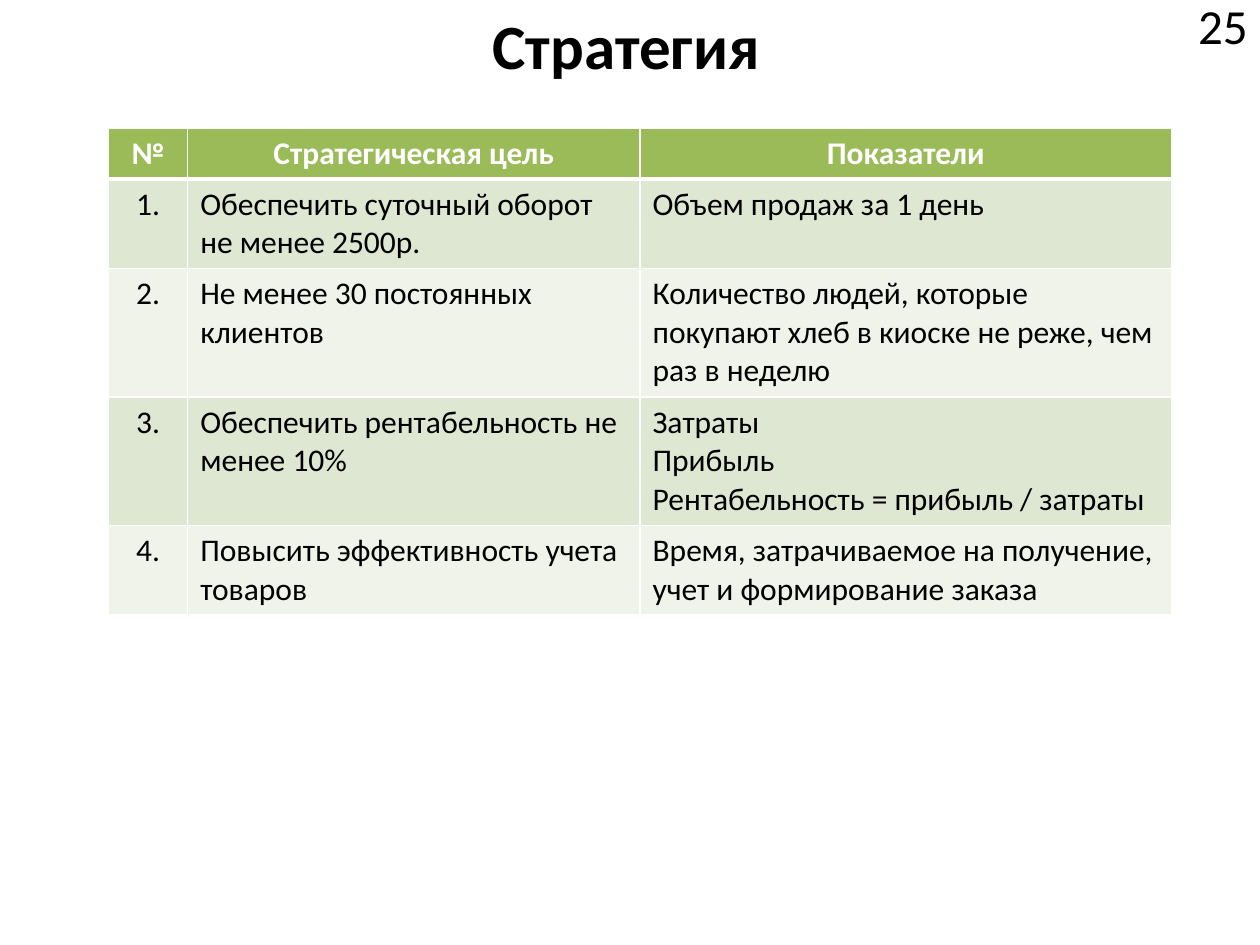
from typing import NamedTuple

from lxml import etree
from pptx import Presentation
from pptx.dml.color import RGBColor
from pptx.enum.text import MSO_ANCHOR, PP_ALIGN
from pptx.oxml.ns import qn
from pptx.util import Inches, Pt

TOP = MSO_ANCHOR.TOP
MIDDLE = MSO_ANCHOR.MIDDLE
LEFT = PP_ALIGN.LEFT
CENTER = PP_ALIGN.CENTER
RIGHT = PP_ALIGN.RIGHT
TITLE_ONLY = 5
FONT = "Calibri"
BLACK = "000000"
WHITE = "FFFFFF"
HEADER_FILL = "9BBB59"
BAND_FILLS = ("DEE7D1", "EFF3EA")


class Goal(NamedTuple):
    number: str
    goal: str
    indicators: str
    height: float


class TextStyle(NamedTuple):
    size: int
    color: str = BLACK
    bold: bool = False
    alignment: PP_ALIGN = LEFT


HEADER = Goal("№", "Стратегическая цель", "Показатели", 0.4)
GOALS = (
    Goal("1.", "Обеспечить суточный оборот не менее 2500р.",
         "Объем продаж за 1 день", 0.71),
    Goal("2.", "Не менее 30 постоянных клиентов",
         "Количество людей, которые покупают хлеб в киоске не реже, чем раз в неделю", 1.02),
    Goal("3.", "Обеспечить рентабельность не менее 10%",
         "Затраты\nПрибыль\nРентабельность = прибыль / затраты", 1.02),
    Goal("4.", "Повысить эффективность учета товаров",
         "Время, затрачиваемое на получение, учет и формирование заказа", 0.71),
)
COLUMN_WIDTHS = (0.63, 3.59, 4.22)


def color(value: str) -> RGBColor:
    return RGBColor.from_string(value)


def write_text(text_frame, text: str, style: TextStyle) -> None:
    text_frame.text = text
    for paragraph in text_frame.paragraphs:
        paragraph.alignment = style.alignment
        paragraph.font.name = FONT
        paragraph.font.size = Pt(style.size)
        paragraph.font.bold = style.bold
        paragraph.font.color.rgb = color(style.color)


def add_borders(cell, bottom: int, top: int) -> None:
    properties = cell._tc.get_or_add_tcPr()
    for side, width in (("L", 1), ("R", 1), ("T", top), ("B", bottom)):
        line = etree.SubElement(properties, qn(f"a:ln{side}"), w=str(Pt(width)))
        fill = etree.SubElement(line, qn("a:solidFill"))
        etree.SubElement(fill, qn("a:srgbClr"), val=WHITE)


def add_goal_table(slide, left: float, top: float) -> None:
    rows = (HEADER, *GOALS)
    shape = slide.shapes.add_table(
        len(rows), len(COLUMN_WIDTHS), Inches(left), Inches(top),
        Inches(sum(COLUMN_WIDTHS)), Inches(sum(row.height for row in rows)))
    table = shape.table
    for column, width in zip(table.columns, COLUMN_WIDTHS):
        column.width = Inches(width)
    for row_index, row in enumerate(rows):
        table.rows[row_index].height = Inches(row.height)
        is_header = row_index == 0
        fill = HEADER_FILL if is_header else BAND_FILLS[(row_index - 1) % 2]
        for column_index, text in enumerate(row[:3]):
            cell = table.cell(row_index, column_index)
            alignment = CENTER if is_header or column_index == 0 else LEFT
            style = TextStyle(18, WHITE if is_header else BLACK, is_header, alignment)
            write_text(cell.text_frame, text, style)
            add_borders(cell, bottom=3 if is_header else 1, top=3 if row_index == 1 else 1)
            cell.fill.solid()
            cell.fill.fore_color.rgb = color(fill)


def add_title(slide, text: str) -> None:
    title = slide.shapes.title
    title.left, title.top = Inches(0.47), Inches(0)
    title.width, title.height = Inches(9), Inches(0.94)
    title.text_frame.vertical_anchor = TOP
    write_text(title.text_frame, text, TextStyle(36, bold=True, alignment=CENTER))


def add_page_number(slide, text: str) -> None:
    box = slide.shapes.add_textbox(Inches(8.98), Inches(0), Inches(1.02), Inches(0.39))
    box.text_frame.word_wrap = True
    box.text_frame.vertical_anchor = MIDDLE
    write_text(box.text_frame, text, TextStyle(28, alignment=RIGHT))


def main() -> None:
    presentation = Presentation()
    presentation.slide_width = Inches(10)
    presentation.slide_height = Inches(7.5)
    slide = presentation.slides.add_slide(presentation.slide_layouts[TITLE_ONLY])
    add_title(slide, "Стратегия")
    add_page_number(slide, "25")
    add_goal_table(slide, 0.86, 1.02)
    presentation.save("out.pptx")


if __name__ == "__main__":
    main()
